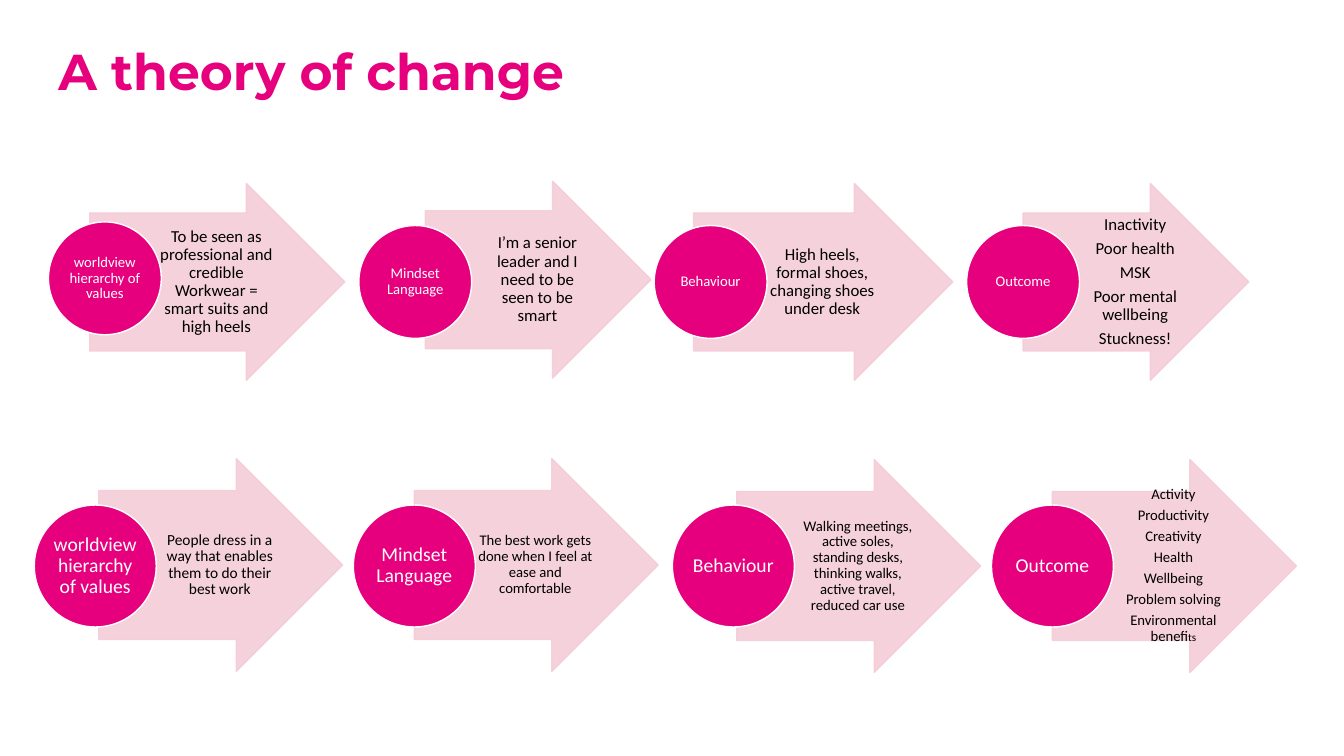
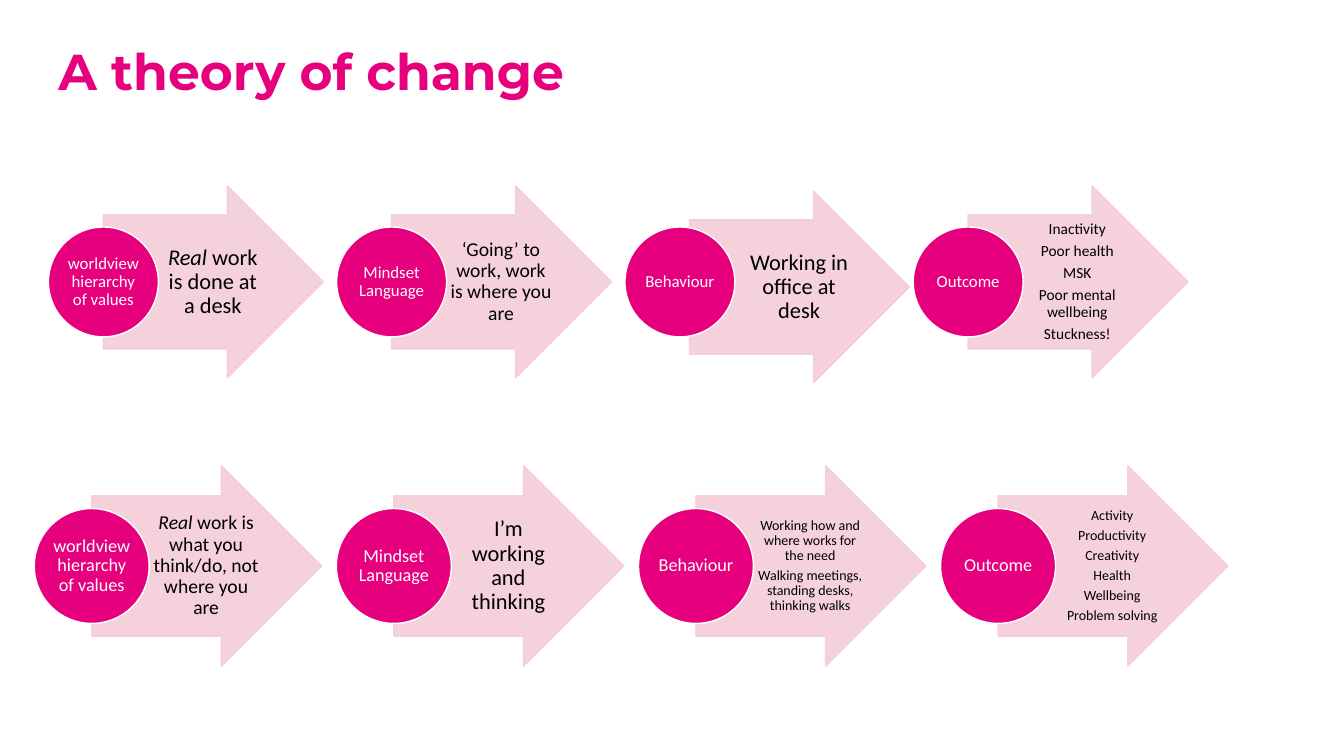
from lxml.etree import SubElement
from pptx import Presentation
from pptx.dml.color import RGBColor
from pptx.enum.shapes import MSO_SHAPE
from pptx.enum.text import MSO_ANCHOR, PP_ALIGN
from pptx.oxml.ns import qn
from pptx.util import Pt

PINK, PALE_PINK, WHITE, BLACK = "E6007E", "F5CCD8", "FFFFFF", "000000"
TITLE_FORMAT = {"name": "Montserrat", "size": Pt(36), "bold": True}
STAGES = ["worldview hierarchy of values", "Mindset Language", "Behaviour", "Outcome"]
ITALIC = {"italic": True}
NO_NUDGE = [(0, 0)] * 4


def paint(target, color, alpha=None):
    """Fill and outline a shape in PALE_PINK/PINK style, or colour a font."""
    target.fill.solid()
    rgb = RGBColor.from_string(color)
    if hasattr(target, "line"):
        target.fill.fore_color.rgb = rgb
        target.line.color.rgb = rgb if alpha else RGBColor.from_string(WHITE)
        target.line.width = Pt(1)
        target.shadow.inherit = False
        if alpha:
            for node in list(target._element.spPr.iter(qn("a:srgbClr"))):
                SubElement(node, qn("a:alpha"), val=str(alpha * 1000))
    else:
        target.fill.fore_color.rgb = rgb


def write(shape, paragraphs, color, font_format, align, insets, space_after=0):
    """Each paragraph is a string or a list of (text, format) runs."""
    frame = shape.text_frame
    frame.word_wrap = True
    frame.vertical_anchor = MSO_ANCHOR.MIDDLE
    for side, inset in zip(("left", "top", "right", "bottom"), insets):
        setattr(frame, f"margin_{side}", Pt(inset))
    for index, runs in enumerate(paragraphs):
        paragraph = frame.add_paragraph() if index else frame.paragraphs[0]
        paragraph.alignment = align
        paragraph.line_spacing = 0.9
        paragraph.space_after = Pt(space_after)
        for text, extra in [(runs, {})] if isinstance(runs, str) else runs:
            run = paragraph.add_run()
            run.text = text
            for key, value in {**font_format, **extra}.items():
                setattr(run.font, key, value)
            paint(run.font, color)


# Content: each row has its circles, arrow nudges (x, y) and (size, paragraphs) texts
poor_outcome = ["Inactivity", "Poor health", "MSK", "Poor mental wellbeing", "Stuckness!"]
good_outcome = ["Activity", "Productivity", "Creativity", "Health", "Wellbeing",
                "Problem solving"]

shoe_rows = [
    {"middle": 201.4, "diameter": 80.6, "stage_size": 10.5,
     "lefts": [34.6, 256.3, 467.3, 690.5],
     "circle_drops": [-2.6, 0, 0, 0],
     "nudges": [(-10.8, 0), (7.2, -1.6), (-12.2, 0), (0, 0)],
     "extra_widths": [21, 0, 24, 0],
     "texts": [
         (12, ["To be seen as professional and credible Workwear = smart suits and high heels"]),
         (12, ["I’m a senior leader and I need to be seen to be smart"]),
         (12, ["High heels, formal shoes, changing shoes under desk"]),
         (12, poor_outcome)]},
    {"middle": 404.3, "diameter": 87.1, "stage_size": 14,
     "lefts": [24.5 + 227.9 * i for i in range(4)],
     "nudges": [(2.5, -0.7), (0, -0.7), (2.5, 0), (0, 0)],
     "texts": [
         (11, ["People dress in a way that enables them to do their best work"]),
         (10.5, ["The best work gets done when I feel at ease and comfortable"]),
         (10.5, ["Walking meetings, active soles, standing desks, thinking walks, "
                 "active travel, reduced car use"]),
         (10.5, good_outcome + [[("Environmental benefi", {}), ("ts", {"size": Pt(8)})]])]},
]
desk_rows = [
    {"middle": 201.4, "diameter": 78.5, "stage_size": 12,
     "lefts": [34.6 + 205.9 * i for i in range(4)],
     "nudges": [(0, 0), (0, 0), (6.9, 3.6), (0, 0)],
     "texts": [
         (16, [[("Real ", ITALIC), ("work is done at a desk", {})]]),
         (14, ["‘Going’ to work, work is where you are"]),
         (16, ["Working in office at desk"]),
         (11, poor_outcome)]},
    {"middle": 404.3, "diameter": 82.1, "stage_size": 13,
     "lefts": [24.5 + 215.8 * i for i in range(4)],
     "texts": [
         (14, [[("Real ", ITALIC), ("work is what you think/do, not where you are", {})]]),
         (16, ["I’m working and thinking"]),
         (10, ["Working how and where works for the need",
               "Walking meetings, standing desks, thinking walks"]),
         (10, good_outcome)]},
]

presentation = Presentation()
presentation.slide_width, presentation.slide_height = Pt(960), Pt(540)

for rows in (shoe_rows, desk_rows):
    slide = presentation.slides.add_slide(presentation.slide_layouts[6])
    shapes = slide.shapes

    # Title
    title = shapes.add_textbox(Pt(34.6), Pt(3.6), Pt(676.8), Pt(98.6))
    write(title, ["A theory of change"], PINK, TITLE_FORMAT, PP_ALIGN.LEFT,
          (7.2, 3.6, 7.2, 3.6))

    for row in rows:
        diameter, middle = row["diameter"], row["middle"]
        height = 1.745 * diameter
        drops = row.get("circle_drops", [0] * 4)
        extra_widths = row.get("extra_widths", [0] * 4)
        nudges = row.get("nudges", NO_NUDGE)
        for stage, left, drop, extra_width, (dx, dy), (size, paragraphs) in zip(
                STAGES, row["lefts"], drops, extra_widths, nudges, row["texts"]):
            # Arrow starts at the centre of its circle
            arrow_left = left + diameter / 2 + dx
            width = 2 * diameter + extra_width
            arrow = shapes.add_shape(MSO_SHAPE.RIGHT_ARROW, Pt(arrow_left),
                                     Pt(middle + dy - height / 2), Pt(width), Pt(height))
            arrow.adjustments[0], arrow.adjustments[1] = 0.7, 0.5
            paint(arrow, PALE_PINK, alpha=90)

            # Text over the arrow shaft
            example = shapes.add_textbox(Pt(arrow_left + width / 4),
                                         Pt(middle + dy - 0.35 * height),
                                         Pt(0.4875 * width), Pt(0.7 * height))
            write(example, paragraphs, BLACK, {"name": "Calibri", "size": Pt(size)},
                  PP_ALIGN.CENTER, (0.18 * size, 0.7, 0.09 * size, 0.7), 0.35 * size)

            # Stage circle
            circle = shapes.add_shape(MSO_SHAPE.OVAL, Pt(left),
                                      Pt(middle + drop - diameter / 2),
                                      Pt(diameter), Pt(diameter))
            paint(circle, PINK)
            stage_size = row["stage_size"]
            write(circle, [stage], WHITE, {"name": "Calibri", "size": Pt(stage_size)},
                  PP_ALIGN.CENTER, (0.7,) * 4, 0.35 * stage_size)

presentation.save("out.pptx")
